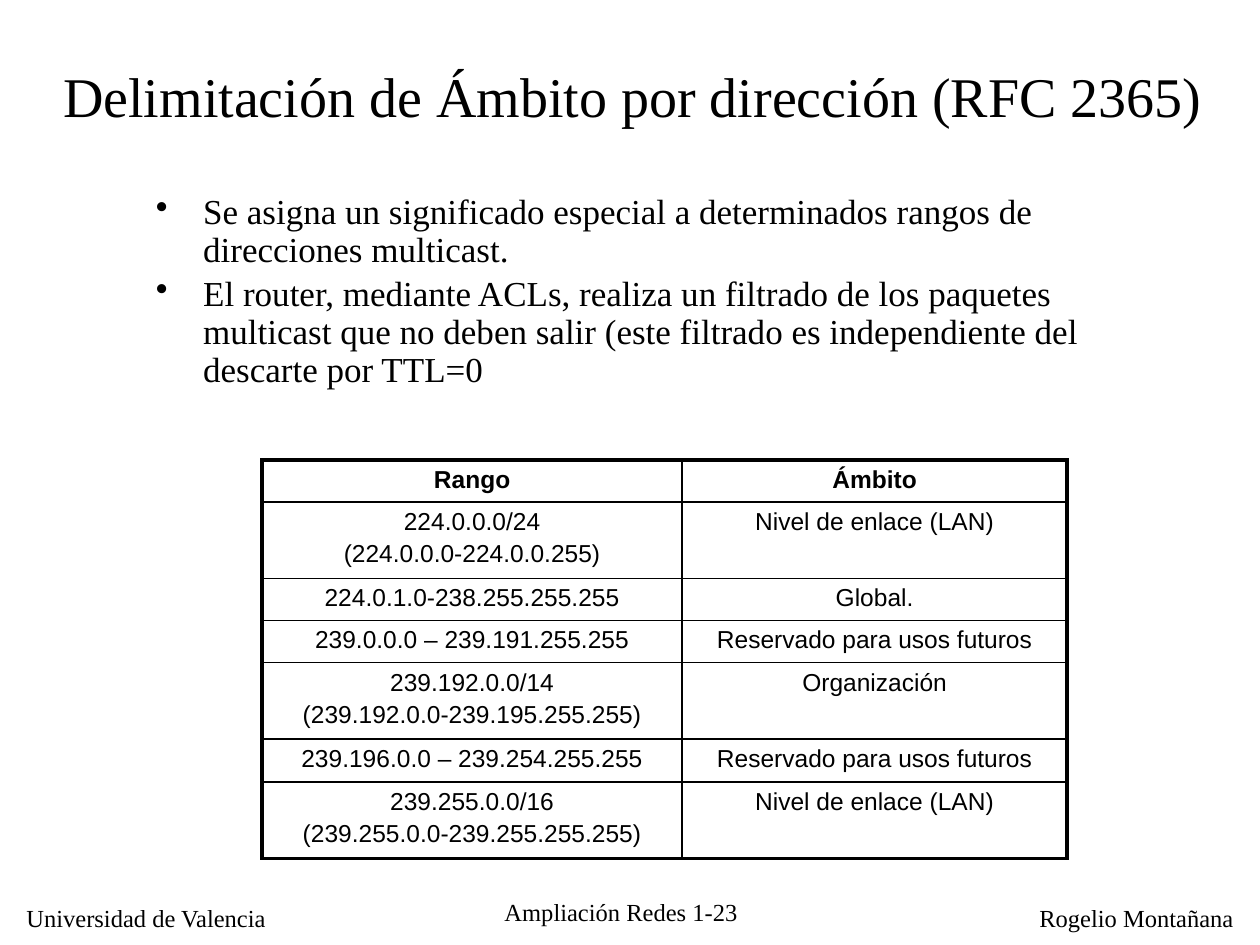
from lxml import etree
from pptx import Presentation
from pptx.dml.color import RGBColor
from pptx.enum import text
from pptx.oxml import ns
from pptx.util import Pt

# Content
TITLE = "Delimitación de Ámbito por dirección (RFC 2365)"
BULLETS = [
    "Se asigna un significado especial a determinados rangos de direcciones multicast.",
    "El router, mediante ACLs, realiza un filtrado de los paquetes multicast que no deben "
    "salir (este filtrado es independiente del descarte por TTL=0",
]
ROWS = [
    ("Rango", "Ámbito"),
    ("224.0.0.0/24\n(224.0.0.0-224.0.0.255)", "Nivel de enlace (LAN)"),
    ("224.0.1.0-238.255.255.255", "Global."),
    ("239.0.0.0 – 239.191.255.255", "Reservado para usos futuros"),
    ("239.192.0.0/14\n(239.192.0.0-239.195.255.255)", "Organización"),
    ("239.196.0.0 – 239.254.255.255", "Reservado para usos futuros"),
    ("239.255.0.0/16\n(239.255.0.0-239.255.255.255)", "Nivel de enlace (LAN)"),
]
FOOTERS = [  # wording, (left, top, width, height), alignment, wrap
    ("Universidad de Valencia", (8, 512.6, 153.4, 24), "LEFT", False),
    ("Ampliación Redes 1-23", (270.7, 509, 168.5, 21.6), "CENTER", True),
    ("Rogelio Montañana", (586.8, 512.6, 125.3, 24), "LEFT", False),
]


class Theme:
    serif, sans = "Times New Roman", "Arial"
    ink = RGBColor(0, 0, 0)
    title, body, small = 32, 20, 14
    frame, rule = 2.25, 1
    gap = 0.2  # space between paragraphs, as a share of the type size


COLUMNS = (240, 220)
LINE_ROW, EXTRA_LINE, LOOSE_ROW = 22.9, 18.8, 24.6
LOOSE_INDEX = 5


def write(frame, wording, font, size, align="LEFT", bold=False):
    frame.text = wording
    for index, para in enumerate(frame.paragraphs):
        para.alignment = getattr(text.PP_ALIGN, align)
        if index:
            para.space_before = Pt(round(size * Theme.gap, 1))
        for span in para.runs:
            span.font.name, span.font.size = font, Pt(size)
            span.font.bold, span.font.color.rgb = bold, Theme.ink


def add_text(page, wording, place, size, align="LEFT", wrap=True):
    box = page.shapes.add_textbox(*map(Pt, place))
    box.text_frame.word_wrap = wrap
    write(box.text_frame, wording, Theme.serif, size, align)
    return box.text_frame


def add_bullet(para, indent):
    props = para._p.get_or_add_pPr()
    props.set("marL", str(Pt(indent)))
    props.set("indent", str(-Pt(indent)))
    etree.SubElement(props, ns.qn("a:buChar")).set("char", "•")


def set_borders(cell, widths):
    props = cell._tc.get_or_add_tcPr()
    for position, (side, width) in enumerate(widths.items()):
        line = etree.Element(ns.qn("a:ln" + side), w=str(Pt(width)))
        fill = etree.SubElement(line, ns.qn("a:solidFill"))
        etree.SubElement(fill, ns.qn("a:srgbClr")).set("val", str(Theme.ink))
        props.insert(position, line)


def add_ranges(page, left, top):
    heights = [LOOSE_ROW if i == LOOSE_INDEX else LINE_ROW + EXTRA_LINE * row[0].count("\n")
               for i, row in enumerate(ROWS)]
    table = page.shapes.add_table(len(ROWS), len(COLUMNS), Pt(left), Pt(top),
                                  Pt(sum(COLUMNS)), Pt(sum(heights))).table
    table.first_row = table.horz_banding = False
    for column, width in zip(table.columns, COLUMNS):
        column.width = Pt(width)
    last_row, last_column = len(ROWS) - 1, len(COLUMNS) - 1
    for r, row in enumerate(ROWS):
        table.rows[r].height = Pt(heights[r])
        for c, wording in enumerate(row):
            cell = table.cell(r, c)
            write(cell.text_frame, wording, Theme.sans, Theme.small, "CENTER", r == 0)
            cell.fill.background()
            outer = {"L": c == 0, "R": c == last_column, "T": r == 0, "B": r == last_row}
            set_borders(cell, {side: Theme.frame if edge else Theme.rule
                               for side, edge in outer.items()})


def main():
    deck = Presentation()
    deck.slide_width, deck.slide_height = Pt(720), Pt(540)
    page = deck.slides.add_slide(deck.slide_layouts[6])

    # Footer
    for wording, place, align, wrap in FOOTERS:
        add_text(page, wording, place, Theme.small, align, wrap)

    # Title
    heading = add_text(page, TITLE, (23, 9.4, 677.5, 90), Theme.title, "CENTER")
    heading.vertical_anchor = text.MSO_ANCHOR.MIDDLE

    # Table of address ranges
    add_ranges(page, 149.8, 262.8)

    # Bullets
    body = add_text(page, "\n".join(BULLETS), (82, 107.3, 601.2, 111.6), Theme.body)
    for para in body.paragraphs:
        para.line_spacing = 0.9
        add_bullet(para, 27)

    deck.save("out.pptx")


if __name__ == "__main__":
    main()
